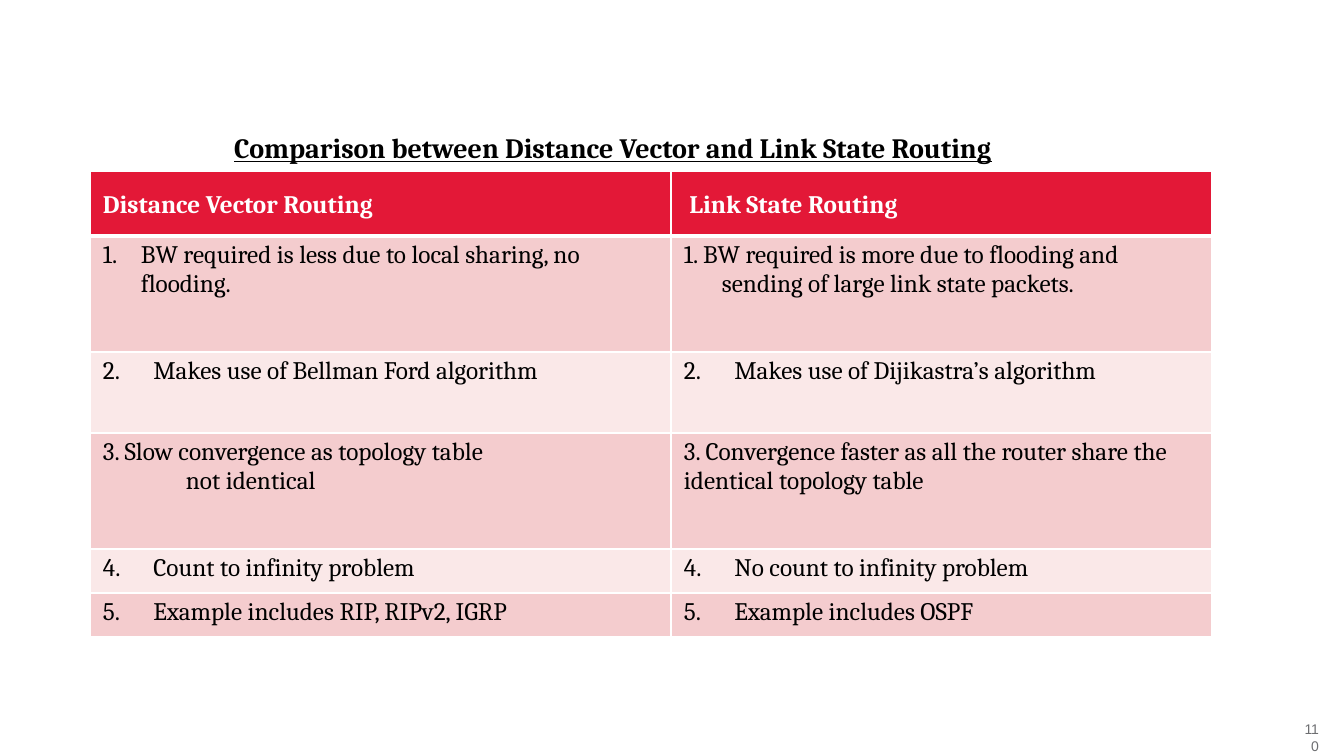
from lxml import etree
from pptx import Presentation
from pptx.dml.color import RGBColor
from pptx.enum.text import MSO_ANCHOR as Anchor, MSO_AUTO_SIZE as AutoSize, PP_ALIGN as Align
from pptx.oxml.ns import qn
from pptx.util import Emu, Pt

EMU_PER_PX = 914400 / 100.8
RED, ROSE, BLUSH = "E31837", "F4CCCE", "FAE8E8"
WHITE, BLACK, GRAY = "FFFFFF", "000000", "6D6E71"


def px(length):
    return Emu(round(length * EMU_PER_PX))


def color(value):
    return RGBColor.from_string(value)


def write(frame, text, size=18, font="Cambria", fill=BLACK, bold=False, underline=False,
          align=Align.LEFT, spacing=1.0, margin=0, indent=0, tab=0, numbered=False):
    """Fill a text frame with one formatted paragraph."""
    paragraph = frame.paragraphs[0]
    paragraph.text = text
    paragraph.alignment = align
    paragraph.line_spacing = spacing
    paragraph.font.size = Pt(size)
    for run in paragraph.runs:
        run.font.size, run.font.name = Pt(size), font
        run.font.bold, run.font.underline = bold, underline
        run.font.color.rgb = color(fill)
    properties = paragraph._p.get_or_add_pPr()
    properties.set("marL", str(px(margin)))
    properties.set("indent", str(px(indent)))
    if numbered:
        etree.SubElement(properties, qn("a:buAutoNum"), type="arabicPeriod")
    if tab:
        stops = etree.SubElement(properties, qn("a:tabLst"))
        etree.SubElement(stops, qn("a:tab"), pos=str(px(tab)), algn="l")
    # Default run properties close the paragraph properties
    defaults = properties.find(qn("a:defRPr"))
    if defaults is not None:
        properties.append(defaults)


def add_border(cell, side, width):
    line = etree.SubElement(cell._tc.get_or_add_tcPr(), qn("a:ln" + side), w=str(Pt(width)))
    fill = etree.SubElement(line, qn("a:solidFill"))
    etree.SubElement(fill, qn("a:srgbClr"), val=WHITE)


class RoutingSlide:
    def __init__(self, presentation):
        self.slide = presentation.slides.add_slide(presentation.slide_layouts[5])

    def title(self, text, left, top, width, height):
        shape = self.slide.shapes.title
        shape.left, shape.top, shape.width, shape.height = map(px, (left, top, width, height))
        frame = shape.text_frame
        frame.auto_size, frame.word_wrap = AutoSize.NONE, True
        frame.vertical_anchor = Anchor.TOP
        write(frame, text, size=20, bold=True, underline=True, align=Align.JUSTIFY, spacing=1.5)

    def page_number(self, text, left, top, width, height):
        shape = self.slide.shapes.add_textbox(*map(px, (left, top, width, height)))
        frame = shape.text_frame
        frame.word_wrap, frame.vertical_anchor = True, Anchor.MIDDLE
        frame.margin_left = frame.margin_right = frame.margin_top = frame.margin_bottom = 0
        write(frame, text, size=10, font="Arial", fill=GRAY, align=Align.RIGHT)

    def table(self, rows, left, top, widths, heights):
        table = self.slide.shapes.add_table(
            len(heights), len(widths),
            *map(px, (left, top, sum(widths), sum(heights)))).table
        for column, width in zip(table.columns, widths):
            column.width = px(width)
        for index, (row, height) in enumerate(zip(rows, heights)):
            table.rows[index].height = px(height)
            for cell, (text, style) in zip(table.rows[index].cells, row):
                self.cell(cell, index, text, style)

    def cell(self, cell, index, text, style):
        cell.margin_left = cell.margin_right = px(13)
        cell.margin_top = cell.margin_bottom = px(5)
        header = index == 0
        widths = {"L": 1, "R": 1, "T": 3 if index == 1 else 1, "B": 3 if header else 1}
        for side, width in widths.items():
            add_border(cell, side, width)
        cell.fill.solid()
        cell.fill.fore_color.rgb = color(RED if header else ROSE if index % 2 else BLUSH)
        if header:
            style = dict(fill=WHITE, bold=True, spacing=1.5)
        write(cell.text_frame, text, **style)


HANGING = dict(margin=38, indent=-38)
COMPARISON = [
    [("Distance Vector Routing", {}), (" Link State Routing", {})],
    [("BW required is less due to local sharing, no flooding.", dict(HANGING, numbered=True)),
     ("1. BW required is more due to flooding and sending of large link state packets.", HANGING)],
    [("2.\tMakes use of Bellman Ford algorithm", dict(tab=33)),
     ("2.\tMakes use of Dijikastra’s algorithm", dict(tab=28))],
    [("3. Slow convergence as topology table\vnot identical", dict(margin=83, indent=-83)),
     ("3. Convergence faster as all the router share the identical topology table", {})],
    [("4.\tCount to infinity problem", dict(tab=28)),
     ("4.\tNo count to infinity problem", dict(tab=34))],
    [("5.\tExample includes RIP, RIPv2, IGRP", dict(tab=28)),
     ("5.\tExample includes OSPF", dict(tab=28))],
]


def main():
    presentation = Presentation()
    presentation.slide_width, presentation.slide_height = px(1344), px(756)
    page = RoutingSlide(presentation)

    # Page number
    page.page_number("110", 1302, 729, 17, 17)

    # Comparison table
    page.table(COMPARISON, 90, 171, widths=[581, 541], heights=[65, 116, 81, 116, 44, 44])

    # Heading
    page.title("Comparison between Distance Vector and Link State Routing", 224, 109, 802, 61)

    presentation.save("out.pptx")


if __name__ == "__main__":
    main()
